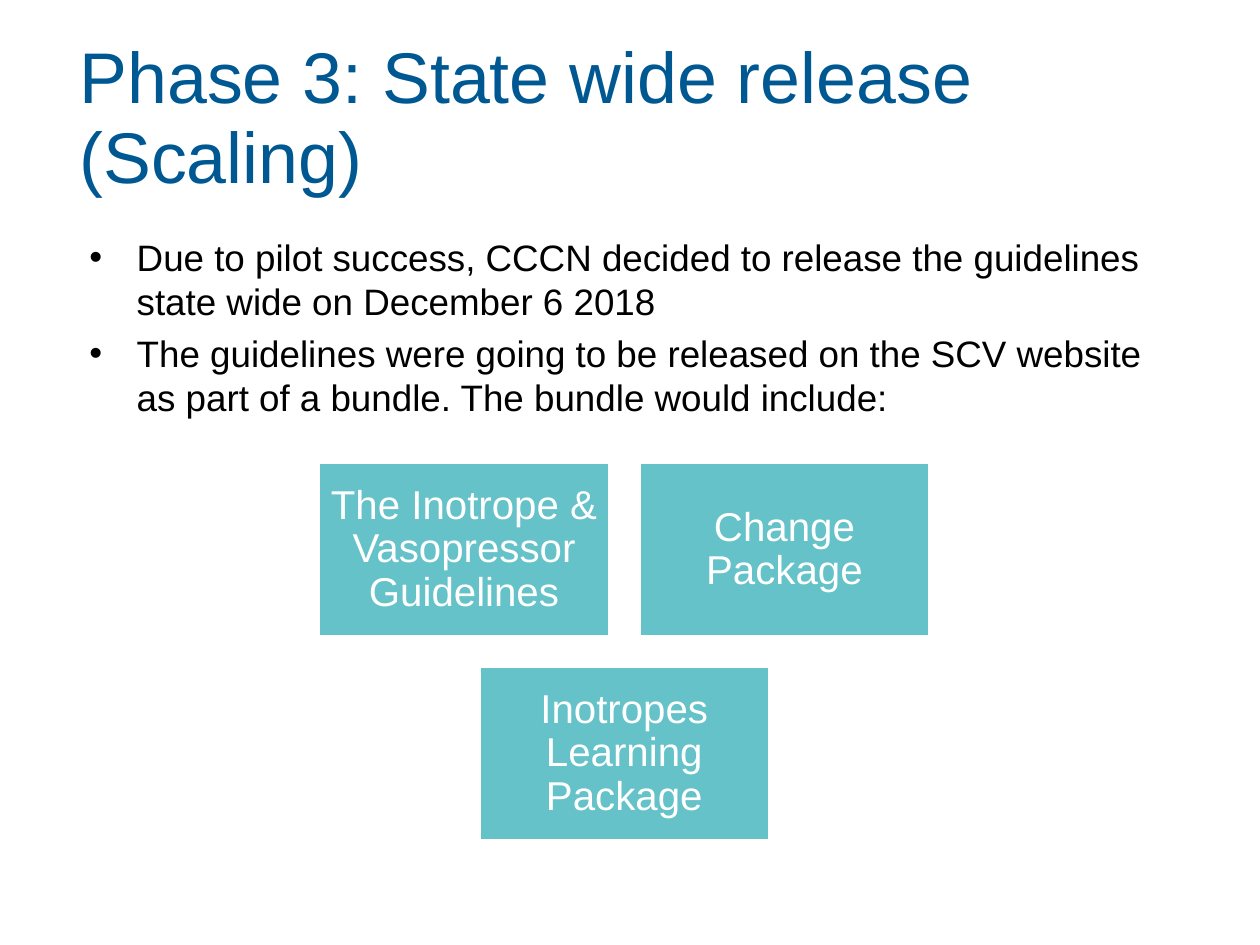
from dataclasses import dataclass

from lxml import etree
from pptx import Presentation
from pptx.dml.color import RGBColor
from pptx.enum import shapes, text
from pptx.oxml import ns
from pptx.util import Pt


@dataclass(frozen=True)
class Theme:
    face: str = "Arial"
    blue: str = "005892"
    teal: str = "64C2C8"
    black: str = "000000"
    white: str = "FFFFFF"
    head: int = 41
    body: int = 21
    card: int = 23


LOOK = Theme()

TITLE = "Phase 3: State wide release (Scaling)"
POINTS = [
    "Due to pilot success, CCCN decided to release the guidelines "
    "state wide on December 6 2018",
    "The guidelines were going to be released on the SCV website "
    "as part of a bundle. The bundle would include:",
]
ROWS = [
    ["The Inotrope & Vasopressor Guidelines", "Change Package"],
    ["Inotropes Learning Package"],
]

# Card grid in points: each row is centred on MID
MID, TOP = 356.8, 264.2
WIDE, HIGH = 166.3, 99.8
GAP = 16.8


def add_run(para, words, size, color):
    run = para.add_run()
    run.text = words
    run.font.name = LOOK.face
    run.font.size = Pt(size)
    run.font.color.rgb = RGBColor.from_string(color)


def set_frame(frame, inset, anchor):
    frame.word_wrap = True
    frame.auto_size = text.MSO_AUTO_SIZE.NONE
    frame.vertical_anchor = anchor
    frame.margin_left = frame.margin_right = Pt(inset)
    frame.margin_top = frame.margin_bottom = Pt(inset)


def place(shape, left, top, width, height):
    shape.left, shape.top = Pt(left), Pt(top)
    shape.width, shape.height = Pt(width), Pt(height)


def add_bullet(para, indent):
    props = para._p.get_or_add_pPr()
    props.set("marL", str(Pt(indent)))
    props.set("indent", str(-Pt(indent)))
    etree.SubElement(props, ns.qn("a:buFont")).set("typeface", LOOK.face)
    etree.SubElement(props, ns.qn("a:buChar")).set("char", "•")


def add_title(slide):
    title = slide.shapes.title
    place(title, 45.4, 44.6, 625, 46)
    set_frame(title.text_frame, 0, text.MSO_ANCHOR.MIDDLE)
    para = title.text_frame.paragraphs[0]
    para.alignment = text.PP_ALIGN.LEFT
    para.line_spacing = Pt(45.4)
    add_run(para, TITLE, LOOK.head, LOOK.blue)


def add_list(slide):
    body = slide.placeholders[1]
    place(body, 51.1, 133.9, 609.1, 302.4)
    frame = body.text_frame
    set_frame(frame, 0, text.MSO_ANCHOR.TOP)
    for i, words in enumerate(POINTS):
        para = frame.add_paragraph() if i else frame.paragraphs[0]
        add_bullet(para, 27)
        para.space_before = Pt(0)
        para.space_after = Pt(4.8)
        add_run(para, words, LOOK.body, LOOK.black)


def add_card(slide, left, top, words):
    card = slide.shapes.add_shape(
        shapes.MSO_SHAPE.RECTANGLE, Pt(left), Pt(top), Pt(WIDE), Pt(HIGH))
    card.shadow.inherit = False
    card.fill.solid()
    card.fill.fore_color.rgb = RGBColor.from_string(LOOK.teal)
    card.line.color.rgb = RGBColor.from_string(LOOK.white)
    card.line.width = Pt(2)
    set_frame(card.text_frame, 6, text.MSO_ANCHOR.MIDDLE)
    para = card.text_frame.paragraphs[0]
    para.alignment = text.PP_ALIGN.CENTER
    para.line_spacing = 0.9
    add_run(para, words, LOOK.card, LOOK.white)


def add_cards(slide):
    for r, row in enumerate(ROWS):
        span = len(row) * (WIDE + GAP) - GAP
        for c, words in enumerate(row):
            add_card(slide, MID - span / 2 + c * (WIDE + GAP),
                     TOP + r * (HIGH + GAP), words)


def main():
    deck = Presentation()
    deck.slide_width, deck.slide_height = Pt(720), Pt(540)
    slide = deck.slides.add_slide(deck.slide_layouts[1])
    # Heading and points
    add_title(slide)
    add_list(slide)
    # Contents of the bundle
    add_cards(slide)
    deck.save("out.pptx")


if __name__ == "__main__":
    main()
